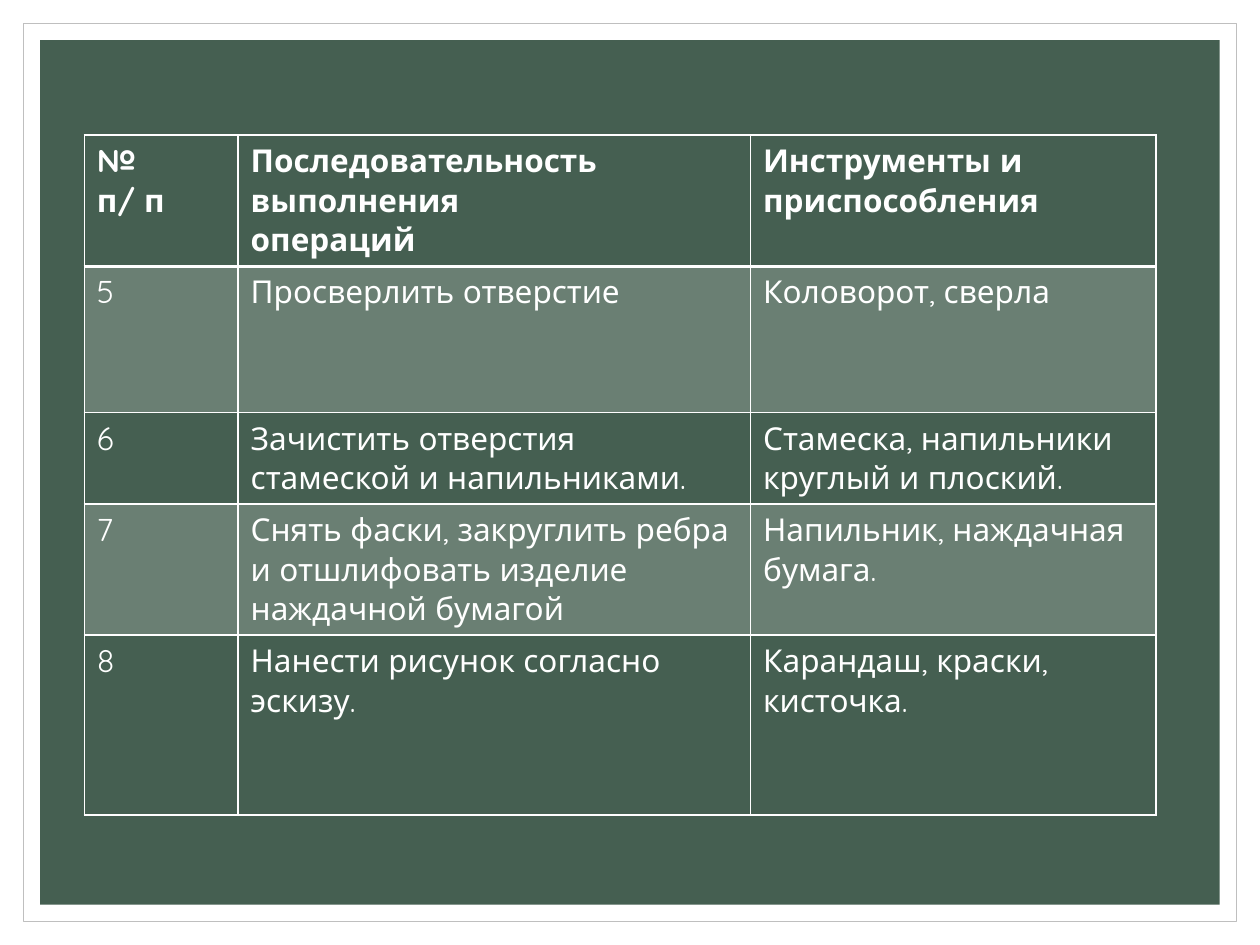
from dataclasses import dataclass

from lxml.etree import SubElement
from pptx import Presentation
from pptx.dml.color import RGBColor as RGB
from pptx.enum.shapes import MSO_SHAPE as SHAPE
from pptx.oxml.ns import qn
from pptx.util import Cm, Pt

COLORS = {"white": "FFFFFF", "frame": "BFBFBF", "board": "455F51"}
FONT = "Quicksand"
COLUMNS = (3.1, 10.33, 8.17)
HEADER = ("№\nп/ п", "Последовательность выполнения\vопераций", "Инструменты и приспособления")


@dataclass
class Panel:
    """A background rectangle inset equally from the slide edges."""
    inset: float
    fill: str
    line: str | None = None


@dataclass
class Row:
    """A table row with its height in centimetres."""
    height: float
    texts: tuple[str, ...]
    banded: bool = False
    header: bool = False


PANELS = (Panel(0.48, "white", "frame"), Panel(0.81, "board"))
ROWS = (
    Row(2.26, HEADER, header=True),
    Row(2.95, ("5", "Просверлить отверстие", "Коловорот, сверла"), banded=True),
    Row(1.57, ("6", "Зачистить отверстия стамеской и напильниками.",
               "Стамеска, напильники круглый и плоский.")),
    Row(1.57, ("7", "Снять фаски, закруглить ребра и отшлифовать изделие наждачной бумагой",
               "Напильник, наждачная бумага."), banded=True),
    Row(3.63, ("8", "Нанести рисунок согласно эскизу.", "Карандаш, краски, кисточка.")),
)


def color(name: str) -> RGB:
    """Look up a named colour."""
    return RGB.from_string(COLORS[name])


def draw_panel(slide, panel: Panel, width: float, height: float) -> None:
    """Draw one background rectangle."""
    inset = panel.inset
    sp = slide.shapes.add_shape(SHAPE.RECTANGLE, Cm(inset), Cm(inset),
                                Cm(width - 2 * inset), Cm(height - 2 * inset))
    sp.shadow.inherit = False
    sp.fill.solid()
    sp.fill.fore_color.rgb = color(panel.fill)
    if panel.line:
        sp.line.color.rgb = color(panel.line)
        sp.line.width = Pt(0.5)
    else:
        sp.line.fill.background()


def set_border(cell, side: str, width: float) -> None:
    """Give one side of a cell a white line."""
    tc_pr = cell._tc.get_or_add_tcPr()
    ln = SubElement(tc_pr, qn(f"a:ln{side}"), w=str(Pt(width)))
    fill = SubElement(ln, qn("a:solidFill"))
    SubElement(fill, qn("a:srgbClr"), val=COLORS["white"])


def fill_cell(cell, banded: bool) -> None:
    """Leave a cell clear, or tint it with translucent white."""
    if not banded:
        cell.fill.background()
        return
    cell.fill.solid()
    cell.fill.fore_color.rgb = color("white")
    clr = cell._tc.tcPr.find(qn("a:solidFill")).find(qn("a:srgbClr"))
    SubElement(clr, qn("a:alpha"), val="20000")


def draw_cell(cell, text: str, row: Row, below_header: bool) -> None:
    """Write and format one cell."""
    cell.text_frame.text = text
    for p in cell.text_frame.paragraphs:
        for r in p.runs:
            r.font.name = FONT
            r.font.size = Pt(18)
            r.font.bold = row.header
            r.font.color.rgb = color("white")
    for side in "LRTB":
        heavy = (side == "B" and row.header) or (side == "T" and below_header)
        set_border(cell, side, 2 if heavy else 1)
    fill_cell(cell, row.banded)


def draw_table(slide, rows: tuple[Row, ...]) -> None:
    """Draw the table of operations and tools."""
    frame = slide.shapes.add_table(len(rows), len(COLUMNS), Cm(1.7), Cm(2.72),
                                   Cm(sum(COLUMNS)), Cm(sum(row.height for row in rows)))
    table = frame.table
    for column, width in zip(table.columns, COLUMNS):
        column.width = Cm(width)
    for i, row in enumerate(rows):
        table.rows[i].height = Cm(row.height)
        for cell, text in zip(table.rows[i].cells, row.texts):
            draw_cell(cell, text, row, below_header=i == 1)


def main() -> None:
    """Build the slide and save it."""
    prs = Presentation()
    width, height = 25.4, 19.05
    prs.slide_width, prs.slide_height = Cm(width), Cm(height)
    s = prs.slides.add_slide(prs.slide_layouts[6])
    for panel in PANELS:
        draw_panel(s, panel, width, height)
    draw_table(s, ROWS)
    prs.save("out.pptx")


if __name__ == "__main__":
    main()
